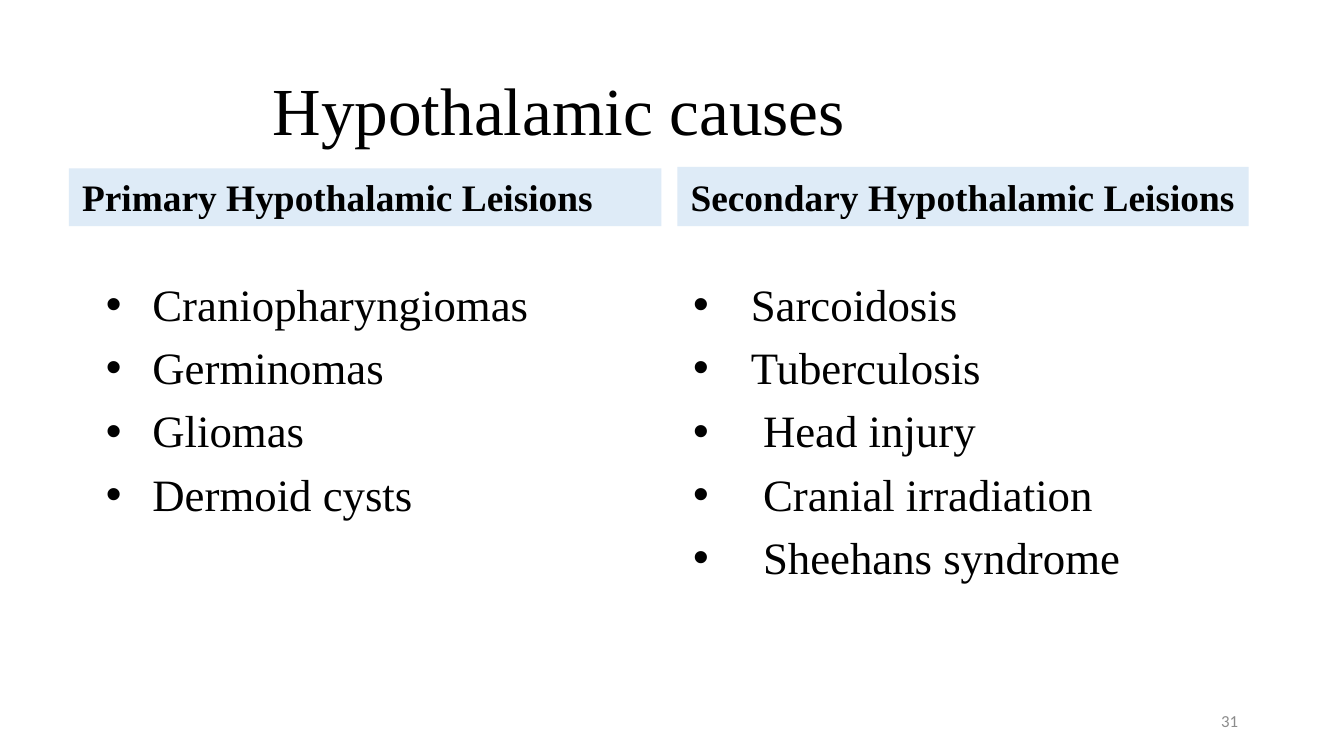
"""Build the slide on primary and secondary hypothalamic causes."""
import pptx
import pptx.dml.color
import pptx.enum.text
import pptx.oxml.ns
import pptx.util
from lxml import etree
from pptx.util import Cm, Pt

COLOURS = {"text": "000000", "band": "DEEBF7", "number": "8C8C8C"}
SERIF = "Times New Roman"
ANCHOR = pptx.enum.text.MSO_ANCHOR
ALIGN = pptx.enum.text.PP_ALIGN
TITLE_FONT = {"name": SERIF, "size": Pt(36), "bold": False}
HEADER_FONT = {"name": SERIF, "size": Pt(20), "bold": True}
LIST_FONT = {"name": SERIF, "size": Pt(24), "bold": False}
NUMBER_FONT = {"name": "Calibri", "size": Pt(9)}
INSET = Cm(0.25)
LIST_TOP, LIST_HEIGHT = Cm(5.21), Cm(7.67)
COLUMNS = [
    {
        "header": "Primary Hypothalamic Leisions",
        "header_box": (Cm(1.3), Cm(3.18), Cm(11.2), Cm(1.09)),
        "list_box": (Cm(1.75), LIST_TOP, Cm(10.74), LIST_HEIGHT),
        "items": [("Craniopharyngiomas", 0.88), ("Germinomas", 0.88),
                  ("Gliomas", 0.88), ("Dermoid cysts", 0.88)],
    },
    {
        "header": "Secondary Hypothalamic Leisions",
        "header_box": (Cm(12.8), Cm(3.15), Cm(10.8), Cm(1.12)),
        "list_box": (Cm(12.85), LIST_TOP, Cm(10.8), LIST_HEIGHT),
        "items": [("Sarcoidosis", 1.09), ("Tuberculosis", 1.09),
                  ("Head injury", 1.32), ("Cranial irradiation", 1.32),
                  ("Sheehans syndrome", 1.32)],
    },
]


def rgb(name):
    """Return the named colour."""
    return pptx.dml.color.RGBColor.from_string(COLOURS[name])


def apply_format(target, values):
    """Set each attribute of the target from a dict."""
    for name, value in values.items():
        setattr(target, name, value)


def prepare_shape(shape, box, anchor, **margins):
    """Place a shape and set up its text frame."""
    apply_format(shape, dict(zip(("left", "top", "width", "height"), box)))
    apply_format(shape.text_frame, {
        "word_wrap": True,
        "auto_size": pptx.enum.text.MSO_AUTO_SIZE.NONE,
        "vertical_anchor": anchor,
        "margin_left": INSET,
        "margin_right": INSET,
        **margins,
    })


def write_paragraph(paragraph, text, font, colour="text", **layout):
    """Fill a paragraph with formatted text."""
    paragraph.text = text
    apply_format(paragraph, {"alignment": ALIGN.LEFT, "space_before": Pt(0), **layout})
    for target in (paragraph.font, paragraph.runs[0].font):
        apply_format(target, font)
        target.color.rgb = rgb(colour)


def add_bullet(paragraph, indent):
    """Give a paragraph a round bullet and a hanging indent."""
    properties = paragraph._p.get_or_add_pPr()
    properties.set("marL", str(indent))
    properties.set("indent", str(-indent))
    qualified = pptx.oxml.ns.qn
    etree.SubElement(properties, qualified("a:buFont")).set("typeface", "Arial")
    etree.SubElement(properties, qualified("a:buChar")).set("char", "•")


def fill_title(shape):
    """Write the slide title."""
    box = (Cm(1.75), Cm(0.76), Cm(21.9), Cm(2.77))
    prepare_shape(shape, box, ANCHOR.MIDDLE, margin_left=Cm(3.4))
    write_paragraph(shape.text_frame.paragraphs[0], "Hypothalamic causes",
                    TITLE_FONT, line_spacing=0.9)


def fill_header(shape, text, box):
    """Write a column header on its tinted band."""
    prepare_shape(shape, box, ANCHOR.BOTTOM, margin_right=0)
    shape.fill.solid()
    shape.fill.fore_color.rgb = rgb("band")
    write_paragraph(shape.text_frame.paragraphs[0], text, HEADER_FONT, line_spacing=0.9)


def fill_list(shape, items, box):
    """Write a bulleted list of causes."""
    prepare_shape(shape, box, ANCHOR.TOP)
    frame = shape.text_frame
    for index, (text, indent) in enumerate(items):
        paragraph = frame.add_paragraph() if index else frame.paragraphs[0]
        add_bullet(paragraph, Cm(indent))
        write_paragraph(paragraph, text, LIST_FONT, line_spacing=0.9,
                        space_before=Pt(8 if index else 0))


def add_slide_number(slide, text):
    """Add the slide number at the bottom right."""
    box = (Cm(17.93), Cm(13.23), Cm(5.72), Cm(0.76))
    shape = slide.shapes.add_textbox(*box)
    prepare_shape(shape, box, ANCHOR.MIDDLE)
    write_paragraph(shape.text_frame.paragraphs[0], text, NUMBER_FONT,
                    "number", alignment=ALIGN.RIGHT)


def main():
    """Build and save the presentation."""
    presentation = pptx.Presentation()
    apply_format(presentation, {"slide_width": Cm(25.4), "slide_height": Cm(14.28)})
    slide = presentation.slides.add_slide(presentation.slide_layouts.get_by_name("Comparison"))
    title, *bodies = slide.placeholders
    fill_title(title)
    for column, header, body in zip(COLUMNS, bodies[::2], bodies[1::2]):
        fill_header(header, column["header"], column["header_box"])
        fill_list(body, column["items"], column["list_box"])
    add_slide_number(slide, "31")
    presentation.save("out.pptx")


if __name__ == "__main__":
    main()
